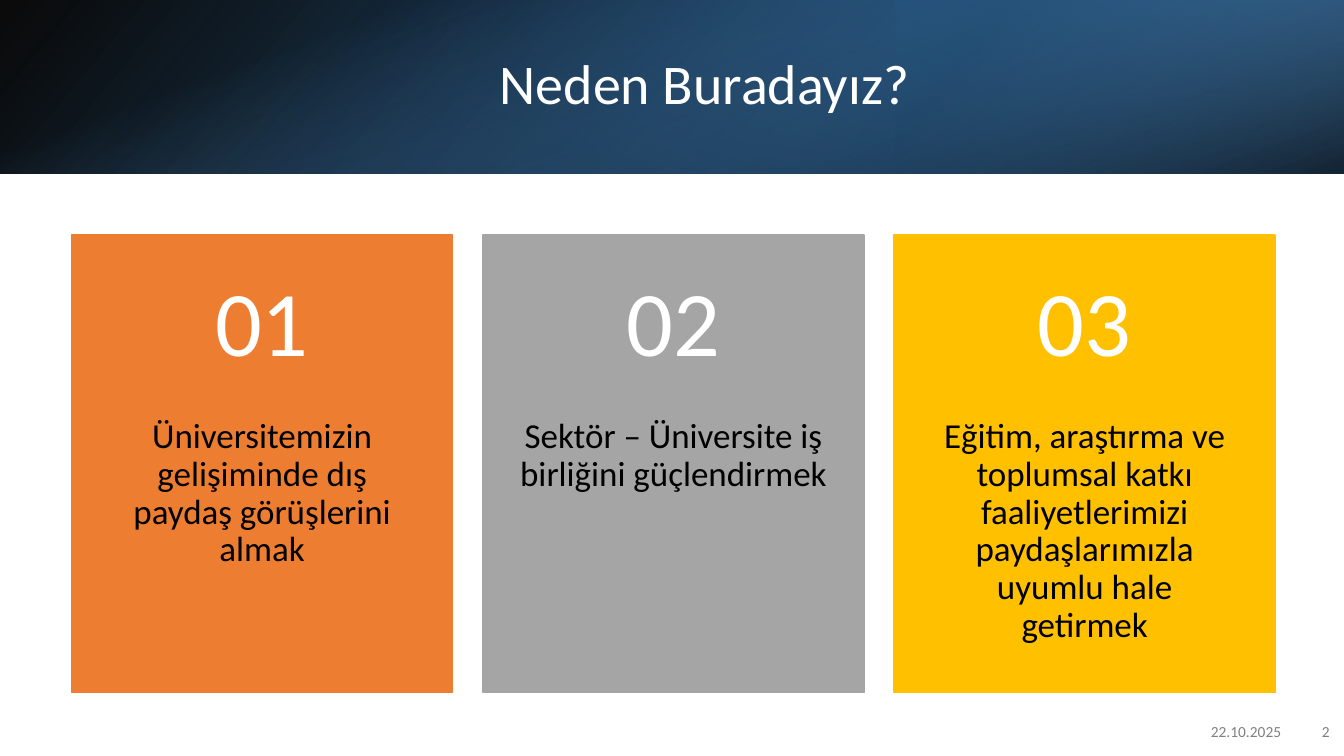
"""Builds a slide with a shaded title band and three numbered cards."""
from dataclasses import dataclass

from pptx import Presentation
from pptx import util as u
from pptx.dml.color import RGBColor
from pptx.enum import shapes, text
from pptx.oxml import xmlchemy
from pptx.oxml.ns import qn
from lxml import etree

Pt = u.Pt
Align = text.PP_ALIGN
Anchor = text.MSO_ANCHOR

BLACK = RGBColor(0x00, 0x00, 0x00)
WHITE = RGBColor(0xFF, 0xFF, 0xFF)
GRAY = RGBColor(0x80, 0x80, 0x80)
NAVY = RGBColor(0x1F, 0x4E, 0x79)
BLUE = RGBColor(0x2E, 0x75, 0xB6)
SKY = RGBColor(0x5B, 0x9B, 0xD5)
ORANGE = RGBColor(0xED, 0x7D, 0x31)
SILVER = RGBColor(0xA5, 0xA5, 0xA5)
GOLD = RGBColor(0xFF, 0xC0, 0x00)

FONT = "Calibri"
WIDE, HIGH, BAND = 960, 540, 124
LEFT, TOP, STEP = 51.12, 167.76, 293.76
CARD_W, HEAD_H, BODY_H = 272.16, 131.04, 195.84
SIDE, PAD = 26.5, 13


@dataclass(frozen=True)
class Stop:
    at: float
    color: RGBColor
    alpha: int


@dataclass(frozen=True)
class Shade:
    box: tuple[float, float, float, float]
    stops: tuple[Stop, Stop]
    angle: int
    turn: int = 0
    flip: bool = False


@dataclass(frozen=True)
class Card:
    color: RGBColor
    label: str


SHADES = (
    Shade((0, 0, WIDE, BAND),
          (Stop(0, BLACK, 96), Stop(1, BLUE, 100)), 140, flip=True),
    Shade((640, 0, 320, BAND),
          (Stop(0.19, NAVY, 68), Stop(1, SKY, 79)), 320, 180, True),
    Shade(((WIDE - BAND) / 2, (BAND - WIDE) / 2, BAND, WIDE),
          (Stop(0.23, SKY, 0), Stop(0.99, BLACK, 74)), 340, 90),
)

CARDS = (
    Card(ORANGE, "Üniversitemizin gelişiminde dış paydaş görüşlerini almak"),
    Card(SILVER, "Sektör – Üniversite iş birliğini güçlendirmek"),
    Card(GOLD, "Eğitim, araştırma ve toplumsal katkı faaliyetlerimizi "
               "paydaşlarımızla uyumlu hale getirmek"),
)


def add_rect(slide, box: tuple):
    rect = slide.shapes.add_shape(
        shapes.MSO_SHAPE.RECTANGLE, *map(Pt, box))
    rect.shadow.inherit = False
    return rect


def add_text(slide, words: str, box: tuple, *, size: float,
             color: RGBColor, align=Align.CENTER, anchor=Anchor.MIDDLE,
             inset: tuple = (7.2, 3.6, 7.2, 3.6),
             lines: float = 1.0) -> None:
    frame = slide.shapes.add_textbox(*map(Pt, box)).text_frame
    frame.word_wrap = True
    frame.vertical_anchor = anchor
    (frame.margin_left, frame.margin_top,
     frame.margin_right, frame.margin_bottom) = map(Pt, inset)
    para = frame.paragraphs[0]
    para.alignment = align
    para.line_spacing = lines
    run = para.add_run()
    run.text = words
    run.font.name = FONT
    run.font.size = Pt(size)
    run.font.color.rgb = color


def add_shade(slide, shade: Shade) -> None:
    rect = add_rect(slide, shade.box)
    rect.line.fill.background()
    rect.rotation = shade.turn
    props = rect._element.spPr
    if shade.flip:
        props.find(qn("a:xfrm")).set("flipH", "1")
    rect.fill.gradient()
    rect.fill.gradient_angle = 360 - shade.angle
    for stop, spec_stop in zip(rect.fill.gradient_stops, shade.stops):
        stop.position = spec_stop.at
        stop.color.rgb = spec_stop.color
    for tint, spec_stop in zip(props.iter(qn("a:srgbClr")), shade.stops):
        alpha = etree.SubElement(tint, qn("a:alpha"))
        alpha.set("val", str(spec_stop.alpha * 1000))


def add_card(slide, index: int, card: Card) -> None:
    left = LEFT + index * STEP
    rect = add_rect(slide, (left, TOP, CARD_W, HEAD_H + BODY_H))
    rect.fill.solid()
    rect.fill.fore_color.rgb = card.color
    rect.line.color.rgb = card.color
    rect.line.width = Pt(1)
    add_text(slide, card.label, (left, TOP + HEAD_H, CARD_W, BODY_H),
             size=25, color=BLACK, anchor=Anchor.TOP,
             inset=(SIDE, 0, SIDE, 2 * PAD), lines=0.9)
    add_text(slide, f"{index + 1:02}", (left, TOP, CARD_W, HEAD_H),
             size=66, color=WHITE, inset=(SIDE, PAD, SIDE, PAD), lines=0.9)


def main() -> None:
    deck = Presentation()
    deck.slide_width, deck.slide_height = Pt(WIDE), Pt(HIGH)
    slide = deck.slides.add_slide(deck.slide_layouts[6])
    for shade in SHADES:
        add_shade(slide, shade)
    add_text(slide, "Neden Buradayız?", (108, 27.36, 790.56, 69.12),
             size=40, color=WHITE, lines=0.9)
    for words, left, width in (("22.10.2025", 706.32, 216),
                               ("2", 921.6, 35.28)):
        add_text(slide, words, (left, 508.32, width, 28.8),
                 size=11, color=GRAY, align=Align.RIGHT)
    for index, card in enumerate(CARDS):
        add_card(slide, index, card)
    deck.save("out.pptx")


if __name__ == "__main__":
    main()
